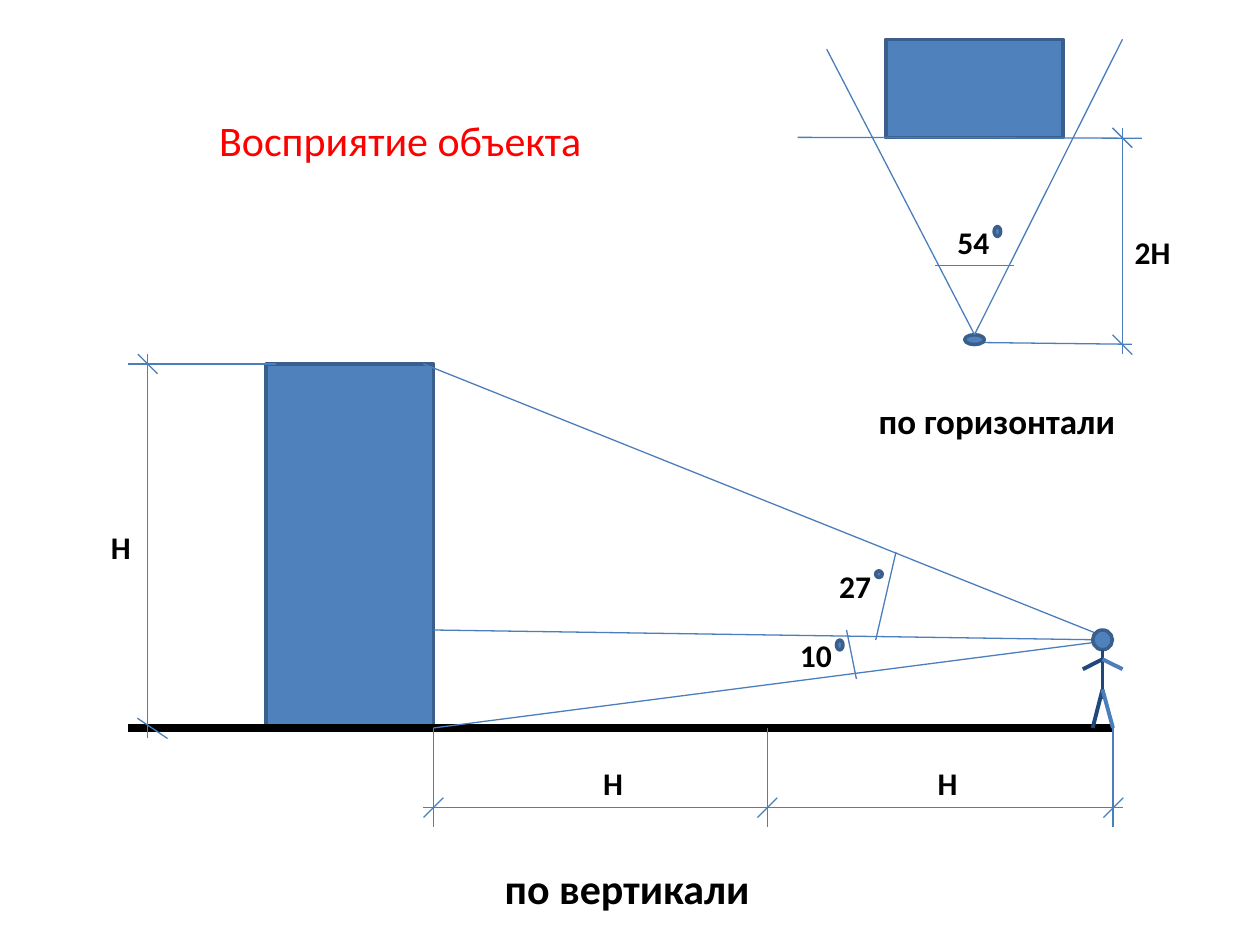
"""Build a slide on how an object is perceived vertically and horizontally."""
from pptx import Presentation
from pptx.dml.color import RGBColor
from pptx.enum import shapes, text
from pptx.oxml import parse_xml
from pptx.oxml.ns import nsdecls
from pptx.util import Pt

BLUE, EDGE, THIN, NAVY = "4F81BD", "3A5F8C", "4B7EBC", "1F497D"
BLACK, RED = "000000", "FF0000"

ROOF, GROUND, DIM = 208, 416, 461.5
WALL, MIDDLE, VIEWER = 247.7, 438.5, 636
EYE = 365.75
SCALE, PLAN_SCALE = 84.4, 641.4
FRONT, STAND = 78.75, 197
TICK = 5.65

BUILDINGS = [(152, ROOF, 95.7, 208), (506.25, 22.5, 101.25, 56.25)]
GROUND_LINE = (73.4, GROUND, VIEWER, GROUND)

ELEVATION_LINES = [
    (WALL, GROUND, WALL, 472.4),
    (MIDDLE, 472.4, MIDDLE, GROUND),
    (VIEWER, 466.7, VIEWER, GROUND),
    (VIEWER, 450, VIEWER, 472.4),
    (242, DIM, 641.5, DIM),
    (WALL, GROUND, VIEWER, EYE),
    (VIEWER, EYE, WALL, 360),
    (VIEWER, EYE, 242, ROOF),
    (512, 315.4, 500.4, EYE),
    (483.75, 360, 489.4, 388),
    (157.5, ROOF, 73.4, ROOF),
    (SCALE, 422, SCALE, 202.4),
    (78.5, 410.4, 95.75, 422),
]
PLAN_LINES = [
    (455.75, 78.5, 652.5, 79),
    (PLAN_SCALE, 73.4, PLAN_SCALE, 197.25),
    (561, 195.75, 646.75, 196.75),
    (PLAN_SCALE, 191.5, PLAN_SCALE, 202.4),
    (534.25, 151.9, 579.6, 151.9),
]
RISING_TICKS = [(WALL, DIM), (MIDDLE, DIM), (VIEWER + 0.2, DIM)]
FALLING_TICKS = [(SCALE, ROOF), (PLAN_SCALE, FRONT), (PLAN_SCALE, STAND)]
RAY_ENDS = [(472.4, 28.1), (PLAN_SCALE, 22.5)]

DEGREE_MARKS = [(500.4, 326.25, 3.75, 3.75), (478, 365.75, 3.75, 5.65),
                (568.1, 129.5, 3.75, 5.65)]
HEAD = (624.4, 360, 11.25, 11.25)
PLAN_EYE = (551.25, 191.25, 11.25, 5.65)

BODY, HIP, SHOULDER = 630, 394, 376.75
LIMBS = [
    (BODY, 371.25, BODY, 399.5, NAVY),
    (BODY, HIP, 624.4, GROUND, NAVY),
    (BODY, HIP, VIEWER, GROUND, THIN),
    (BODY, SHOULDER, 618.75, 382.4, NAVY),
    (BODY, SHOULDER, 641.5, 382.4, THIN),
]

BOLD_18 = {"size": Pt(18), "bold": True}
LABELS = [
    ("H", (56.25, 298, 22.5, 29), BOLD_18),
    ("H", (337.5, 433.25, 39.5, 29), BOLD_18),
    ("H", (528.75, 433.25, 28, 29), BOLD_18),
    ("27", (472.5, 320.6, 45, 29), BOLD_18),
    ("10", (450, 360, 34, 29), BOLD_18),
    ("54", (540, 123.75, 34, 29), BOLD_18),
    ("2H", (641.25, 129.5, 62, 29), BOLD_18),
    ("Восприятие объекта", (118.1, 61.9, 292.5, 36.4),
     {"size": Pt(24), "bold": False, "color": RED}),
    ("по горизонтали", (495, 225, 157.5, 31.5), {"size": Pt(20), "bold": True}),
    ("по вертикали", (281.25, 489.4, 213.75, 36.4),
     {"size": Pt(24), "bold": True}),
]


def paint(target, color):
    """Give a colour format or a solid fill the hex colour."""
    if hasattr(target, "solid"):
        target.solid()
        target = target.fore_color
    target.rgb = RGBColor.from_string(color)


def add_solid(page, kind, frame):
    """Add a blue outlined shape."""
    shape = page.shapes.add_shape(kind, *map(Pt, frame))
    shape.shadow.inherit = False
    paint(shape.fill, BLUE)
    paint(shape.line.fill, EDGE)
    shape.line.width = Pt(2)
    return shape


def add_line(page, ends, color=THIN, width=0.75):
    """Add a straight line without a shadow."""
    line = page.shapes.add_connector(
        shapes.MSO_CONNECTOR.STRAIGHT, *map(Pt, ends))
    paint(line.line.fill, color)
    line.line.width = Pt(width)
    line._element.spPr.append(parse_xml(f"<a:effectLst {nsdecls('a')}/>"))
    return line


def add_tick(page, x, y, rise):
    """Add a slanted dimension tick centred on a point."""
    add_line(page, (x - TICK, y + rise, x + TICK, y - rise))


def add_label(page, words, frame, style):
    """Add a text box with one styled line."""
    box = page.shapes.add_textbox(*map(Pt, frame))
    frame_format = {"word_wrap": True,
                    "auto_size": text.MSO_AUTO_SIZE.SHAPE_TO_FIT_TEXT}
    for name, value in frame_format.items():
        setattr(box.text_frame, name, value)
    para = box.text_frame.paragraphs[0]
    span = para.add_run()
    span.text = words
    for name, value in {"name": "Calibri", **style}.items():
        if name != "color":
            setattr(span.font, name, value)
    paint(span.font.color, style.get("color", BLACK))


def main():
    """Draw the elevation, the plan and their labels."""
    deck = Presentation()
    deck.slide_width, deck.slide_height = Pt(720), Pt(540)
    page = deck.slides.add_slide(deck.slide_layouts[6])

    for frame in BUILDINGS:
        add_solid(page, shapes.MSO_SHAPE.RECTANGLE, frame)
    add_line(page, GROUND_LINE, BLACK, 4.5)
    for ends in ELEVATION_LINES + PLAN_LINES:
        add_line(page, ends)
    for ticks, rise in ((RISING_TICKS, TICK), (FALLING_TICKS, -TICK)):
        for x, y in ticks:
            add_tick(page, x, y, rise)

    for frame in DEGREE_MARKS + [HEAD]:
        add_solid(page, shapes.MSO_SHAPE.OVAL, frame)
    for *ends, color in LIMBS:
        add_line(page, ends, color, 2.25)

    eye = add_solid(page, shapes.MSO_SHAPE.OVAL, PLAN_EYE)
    left, top, width, _ = PLAN_EYE
    for end in RAY_ENDS:
        ray = add_line(page, (left + width / 2, top, *end))
        ray.begin_connect(eye, 0)

    for label in LABELS:
        add_label(page, *label)
    deck.save("out.pptx")


if __name__ == "__main__":
    main()
